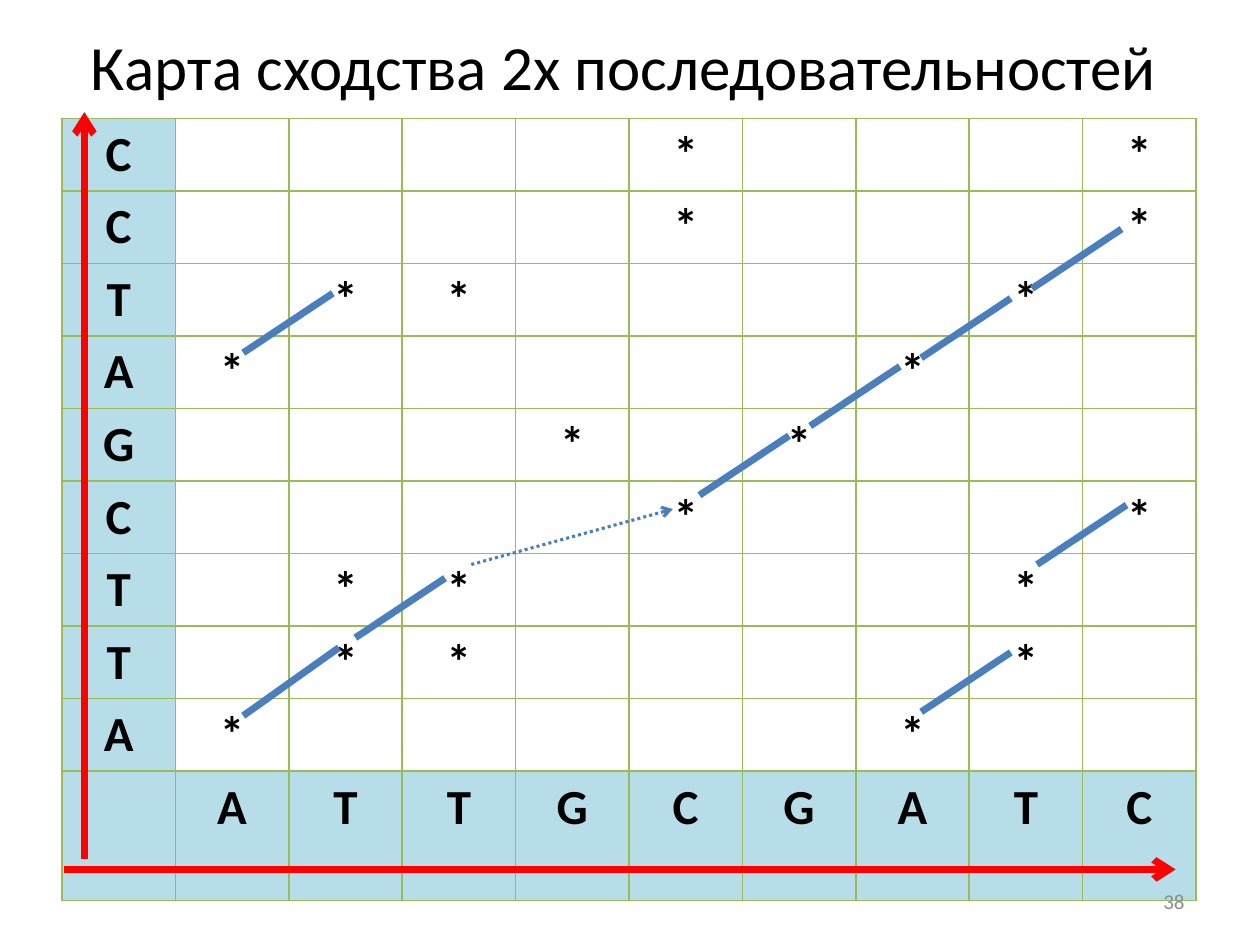
from lxml import etree
from pptx import Presentation
from pptx.dml.color import RGBColor
from pptx.enum.dml import MSO_LINE
from pptx.enum.shapes import MSO_CONNECTOR
from pptx.enum.text import MSO_ANCHOR, PP_ALIGN
from pptx.oxml.ns import qn
from pptx.util import Pt

STRAIGHT = MSO_CONNECTOR.STRAIGHT
SYS_DOT = MSO_LINE.ROUND_DOT
MIDDLE = MSO_ANCHOR.MIDDLE
CENTER, RIGHT = PP_ALIGN.CENTER, PP_ALIGN.RIGHT

FONT = "Calibri"
COLORS = {
    "text": "000000",
    "number": "8C8C8C",
    "border": "9BBB59",
    "header": "B7DEE8",
    "cell": "FFFFFF",
    "match": "4B7EBC",
    "axis": "FF0000",
}

VERTICAL_SEQUENCE = "CCTAGCTTA"  # top to bottom
HORIZONTAL_SEQUENCE = "ATTGCGATC"
ROW_HEIGHT, LAST_ROW_HEIGHT = 41.4, 74

# Diagonal matches, measured from the corner of the map
DIAGONAL_STEP = (51.2, -34)
DIAGONAL_STARTS = [
    (167.7, 296.7), (364.3, 215.3), (427.6, 175.7), (491, 136.8),
    (554.3, 97.2), (103.6, 133.9), (491, 339.1), (557.2, 254.9),
]


def rgb(name):
    return RGBColor.from_string(COLORS[name])


def write(frame, text, size, color, align, bold=False):
    paragraph = frame.paragraphs[0]
    paragraph.alignment = align
    run = paragraph.add_run()
    run.text = text
    run.font.name = FONT
    run.font.size = Pt(size)
    run.font.bold = bold
    run.font.color.rgb = rgb(color)


def place(shape, box):
    shape.left, shape.top, shape.width, shape.height = map(Pt, box)


def add_title(slide, box):
    title = slide.shapes.title
    place(title, box)
    title.text_frame.vertical_anchor = MIDDLE
    write(title.text_frame, "Карта сходства 2х последовательностей", 36, "text", CENTER)


def add_borders(cell):
    properties = cell._tc.get_or_add_tcPr()
    for side in ("a:lnL", "a:lnR", "a:lnT", "a:lnB"):
        border = etree.SubElement(properties, qn(side), w=str(Pt(1)))
        fill = etree.SubElement(border, qn("a:solidFill"))
        etree.SubElement(fill, qn("a:srgbClr"), val=COLORS["border"])


def cell_text(row, column):
    """Sequence letters on the edges, a star wherever the two letters agree."""
    vertical = (*VERTICAL_SEQUENCE, "")[row]
    horizontal = ("", *HORIZONTAL_SEQUENCE)[column]
    if vertical and horizontal:
        return "*" if vertical == horizontal else ""
    return vertical or horizontal


def add_similarity_table(slide, box):
    rows, columns = len(VERTICAL_SEQUENCE) + 1, len(HORIZONTAL_SEQUENCE) + 1
    table = slide.shapes.add_table(rows, columns, *map(Pt, box)).table
    for column in table.columns:
        column.width = Pt(box[2] / columns)
    for index, row in enumerate(table.rows):
        row.height = Pt(LAST_ROW_HEIGHT if index == rows - 1 else ROW_HEIGHT)
        for position, cell in enumerate(row.cells):
            is_header = position == 0 or index == rows - 1
            add_borders(cell)
            cell.fill.solid()
            cell.fill.fore_color.rgb = rgb("header" if is_header else "cell")
            text = cell_text(index, position)
            if text:
                write(cell.text_frame, text, 28, "text", CENTER, bold=True)


def add_line(slide, box, start, end, color, width=4, arrow=False, dash=None):
    """Draw a line between two points measured from the corner of the box."""
    left, top = box[:2]
    connector = slide.shapes.add_connector(
        STRAIGHT, Pt(left + start[0]), Pt(top + start[1]),
        Pt(left + end[0]), Pt(top + end[1]))
    connector.line.color.rgb = rgb(color)
    connector.line.width = Pt(width)
    if dash is not None:
        connector.line.dash_style = dash
    if arrow:
        etree.SubElement(connector.line._get_or_add_ln(), qn("a:tailEnd"), type="arrow")
    etree.SubElement(connector._element.spPr, qn("a:effectLst"))


def add_matches(slide, box):
    add_line(slide, box, (103.6, 341.3), (158.3, 302.4), "match")
    for x, y in DIAGONAL_STARTS:
        end = (x + DIAGONAL_STEP[0], y + DIAGONAL_STEP[1])
        add_line(slide, box, (x, y), end, "match")
    # Gap between the two aligned stretches
    add_line(slide, box, (233.9, 254.9), (349.1, 223.2), "match", 1.75, True, SYS_DOT)


def add_axes(slide, box):
    add_line(slide, box, (1.3, 429.1), (636.4, 429.1), "axis", arrow=True)
    add_line(slide, box, (12.8, 423.3), (12.8, -3.6), "axis", arrow=True)


def add_page_number(slide, box):
    frame = slide.shapes.add_textbox(*map(Pt, box)).text_frame
    frame.word_wrap = True
    frame.vertical_anchor = MIDDLE
    write(frame, "38", 12, "number", RIGHT)


def main():
    presentation = Presentation()
    presentation.slide_width, presentation.slide_height = Pt(720), Pt(540)
    slide = presentation.slides.add_slide(presentation.slide_layouts[5])
    similarity_map = (35.4, 67.7, 648, 9 * ROW_HEIGHT + LAST_ROW_HEIGHT)

    add_title(slide, (32.4, 10.1, 648, 54.7))
    add_similarity_table(slide, similarity_map)
    add_page_number(slide, (516, 500.5, 168, 28.8))
    add_matches(slide, similarity_map)
    add_axes(slide, similarity_map)

    presentation.save("out.pptx")


if __name__ == "__main__":
    main()
